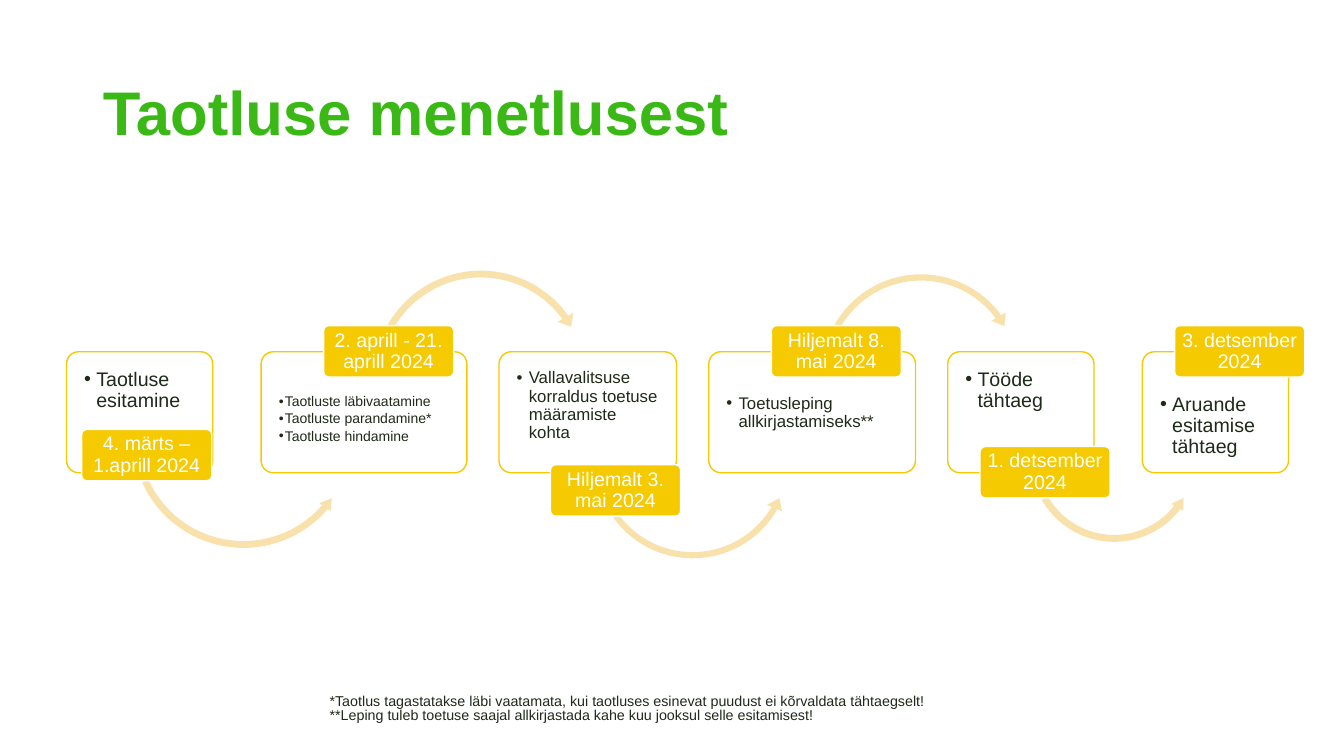
from dataclasses import dataclass
from typing import Optional

from lxml.etree import SubElement
from pptx import Presentation
from pptx.dml.color import RGBColor
from pptx.enum.shapes import MSO_SHAPE
from pptx.enum.text import MSO_ANCHOR, MSO_AUTO_SIZE, PP_ALIGN
from pptx.oxml.ns import qn
from pptx.shapes.autoshape import Shape
from pptx.slide import Slide
from pptx.text.text import TextFrame
from pptx.util import Emu, Pt

PX = 9144  # 100 px to the inch
FONT = "Arial"
GREEN = RGBColor(0x3A, 0xB9, 0x16)
YELLOW = RGBColor(0xF5, 0xCA, 0x01)
SAND = RGBColor(0xF9, 0xE1, 0xAB)
DARK = RGBColor(0x1E, 0x2B, 0x18)
WHITE = RGBColor(0xFF, 0xFF, 0xFF)

BOX_TOP, BOX_HEIGHT = 349, 120
TAG_WIDTH, TAG_HEIGHT = 129, 51
TAG_TOP = 323
TEXT_INSET, LOWERED_INSET = 14, 39


@dataclass(frozen=True)
class Arrow:
    left: int
    top: int
    size: int
    adjustments: tuple[float, ...]


@dataclass(frozen=True)
class Step:
    left: int
    width: int
    tasks: tuple[str, ...]
    text_size: int
    date: str
    tag_left: int
    tag_top: int
    arrow: Optional[Arrow] = None
    indent: int = 12

    @property
    def tag_above(self) -> bool:
        return self.tag_top == TAG_TOP


STEPS = (
    Step(66, 145, ("Taotluse esitamine",), 14, "4. märts – 1.aprill 2024", 81, 426,
         Arrow(128, 320, 227, (0.03, 3.57, 24.44, 93.37, 0.03))),
    Step(259, 204, ("Taotluste läbivaatamine", "Taotluste parandamine*", "Taotluste hindamine"),
         10, "2. aprill - 21. aprill 2024", 321, TAG_TOP,
         Arrow(365, 263, 224, (0.03, 3.62, 194.62, 125.76, 0.04)), indent=6),
    Step(495, 176, ("Vallavalitsuse korraldus toetuse määramiste kohta",), 12,
         "Hiljemalt 3. mai 2024", 546, 461,
         Arrow(585, 355, 204, (0.03, 4.01, 18.07, 86.55, 0.04))),
    Step(703, 205, ("Toetusleping allkirjastamiseks**",), 12,
         "Hiljemalt 8. mai 2024", 765, TAG_TOP,
         Arrow(810, 267, 207, (0.03, 3.95, 194.29, 125.76, 0.04))),
    Step(940, 145, ("Tööde tähtaeg",), 14, "1. detsember 2024", 972, 443,
         Arrow(1019, 369, 172, (0.04, 4.82, 22.57, 90.25, 0.04))),
    Step(1133, 145, ("Aruande esitamise tähtaeg",), 14, "3. detsember 2024", 1165, TAG_TOP),
)
FOOTNOTES = (
    "*Taotlus tagastatakse läbi vaatamata, kui taotluses esinevat puudust ei kõrvaldata tähtaegselt!",
    "**Leping tuleb toetuse saajal allkirjastada kahe kuu jooksul selle esitamisest!",
)


def px(length: int) -> Emu:
    return Emu(length * PX)


def write(frame: TextFrame, lines: tuple[str, ...], size: float, color: RGBColor,
          spacing: float, align: PP_ALIGN = PP_ALIGN.LEFT, bold: bool = False) -> None:
    frame.word_wrap = True
    frame.auto_size = MSO_AUTO_SIZE.NONE
    frame.text = "\n".join(lines)
    for para in frame.paragraphs:
        para.alignment = align
        para.line_spacing = spacing
        for span in para.runs:
            span.font.name = FONT
            span.font.size = Pt(size)
            span.font.bold = bold
            span.font.color.rgb = color


def set_insets(frame: TextFrame, side: int, top: int, bottom: int) -> None:
    frame.margin_left = frame.margin_right = px(side)
    frame.margin_top, frame.margin_bottom = px(top), px(bottom)


def add_rounded(page: Slide, left: int, top: int, width: int, height: int,
                fill: RGBColor, line: RGBColor) -> Shape:
    shape = page.shapes.add_shape(
        MSO_SHAPE.ROUNDED_RECTANGLE, px(left), px(top), px(width), px(height))
    shape.adjustments[0] = 0.1
    shape.shadow.inherit = False
    shape.fill.solid()
    shape.fill.fore_color.rgb = fill
    shape.line.color.rgb = line
    shape.line.width = Pt(1)
    return shape


def add_task_box(page: Slide, step: Step) -> None:
    box = add_rounded(page, step.left, BOX_TOP, step.width, BOX_HEIGHT, WHITE, YELLOW)
    frame = box.text_frame
    frame.vertical_anchor = MSO_ANCHOR.TOP
    set_insets(frame, TEXT_INSET, LOWERED_INSET if step.tag_above else TEXT_INSET, 0)
    write(frame, step.tasks, step.text_size, DARK, 0.9)
    for para in frame.paragraphs:
        para.space_after = Pt(0.15 * step.text_size)
        properties = para._p.get_or_add_pPr()
        properties.set("marL", str(px(step.indent)))
        properties.set("indent", str(-px(step.indent)))
        SubElement(properties, qn("a:buFont"), typeface=FONT)
        SubElement(properties, qn("a:buChar"), char="•")


def add_arrow(page: Slide, arrow: Arrow, from_above: bool) -> None:
    kind = MSO_SHAPE.CIRCULAR_ARROW if from_above else MSO_SHAPE.LEFT_CIRCULAR_ARROW
    shape = page.shapes.add_shape(
        kind, px(arrow.left), px(arrow.top), px(arrow.size), px(arrow.size))
    for index, value in enumerate(arrow.adjustments):
        shape.adjustments[index] = value
    shape.shadow.inherit = False
    shape.fill.solid()
    shape.fill.fore_color.rgb = SAND
    shape.line.fill.background()


def add_date_tag(page: Slide, step: Step) -> None:
    tag = add_rounded(page, step.tag_left, step.tag_top, TAG_WIDTH, TAG_HEIGHT, YELLOW, WHITE)
    tag.text_frame.vertical_anchor = MSO_ANCHOR.MIDDLE
    set_insets(tag.text_frame, 3, 2, 2)
    write(tag.text_frame, (step.date,), 14, WHITE, 0.9, PP_ALIGN.CENTER)


def main() -> None:
    deck = Presentation()
    deck.slide_width, deck.slide_height = px(1333), px(750)
    page = deck.slides.add_slide(deck.slide_layouts[5])

    # Title
    title = page.shapes.title
    title.left, title.top, title.width, title.height = px(92), px(8), px(1150), px(145)
    title.text_frame.vertical_anchor = MSO_ANCHOR.BOTTOM
    write(title.text_frame, ("Taotluse menetlusest",), 44, GREEN, 0.9, bold=True)

    # Process steps
    for step in STEPS:
        add_task_box(page, step)
        if step.arrow:
            add_arrow(page, step.arrow, step.tag_above)
        add_date_tag(page, step)

    # Footnotes
    notes = page.shapes.add_textbox(px(317), px(684), px(779), px(38))
    notes.text_frame.vertical_anchor = MSO_ANCHOR.BOTTOM
    write(notes.text_frame, FOOTNOTES, 10.2, DARK, 0.8)

    deck.save("out.pptx")


if __name__ == "__main__":
    main()
